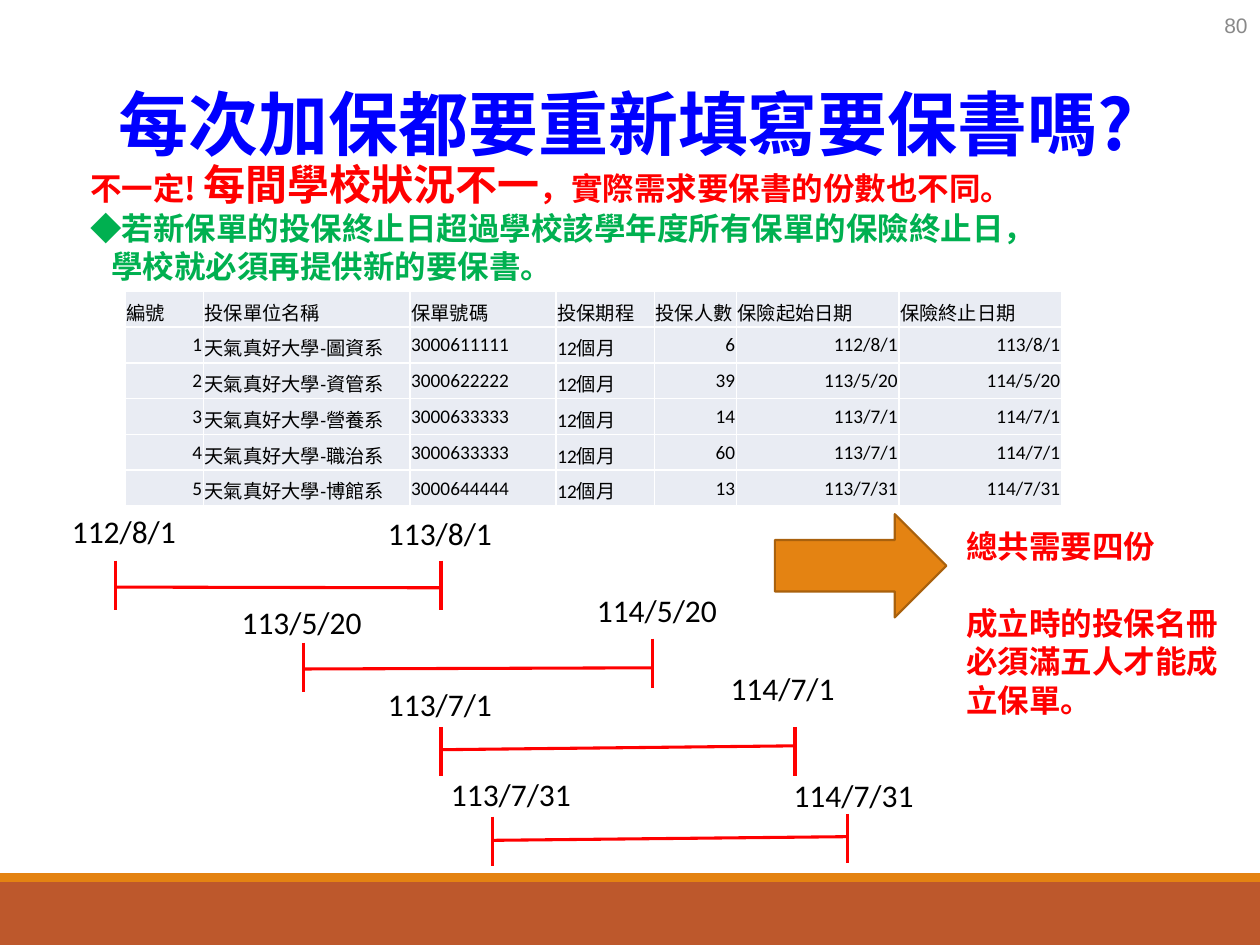
from lxml import etree
from pptx import Presentation
from pptx import util as u
from pptx.dml import color
from pptx.enum import shapes, text
from pptx.oxml import ns

Pt = u.Pt
CJK = "Noto Sans CJK SC"
RED, GREEN, ORANGE = "FF0000", "00B050", "E48312"
LEFT, CENTER, RIGHT = text.PP_ALIGN.LEFT, text.PP_ALIGN.CENTER, text.PP_ALIGN.RIGHT
TICK = 28.3

HEADINGS = ["編號", "投保單位名稱", "保單號碼", "投保期程", "投保人數", "保險起始日期", "保險終止日期"]
POLICIES = [
    ("圖資系", "3000611111", "6", "112/8/1", "113/8/1"),
    ("資管系", "3000622222", "39", "113/5/20", "114/5/20"),
    ("營養系", "3000633333", "14", "113/7/1", "114/7/1"),
    ("職治系", "3000633333", "60", "113/7/1", "114/7/1"),
    ("博館系", "3000644444", "13", "113/7/31", "114/7/31"),
]
COLUMNS = [44.6, 118.1, 83.5, 56.2, 46.8, 92.9, 92.9]
ALIGNS = [RIGHT, LEFT, LEFT, LEFT, RIGHT, RIGHT, RIGHT]

# date, tick x, tick top, bar y, label x, label y
PERIODS = [
    (("112/8/1", 36, 32.4, 47.5, 4, 1), ("113/8/1", 222, 32.4, 47.9, 184.6, 2)),
    (("113/5/20", 143.5, 79.2, 94.3, 101, 53.3), ("114/5/20", 343, 77, 93.6, 304, 46)),
    (("113/7/1", 222, 127.4, 140.4, 184.6, 100), ("114/7/1", 424.3, 127.4, 138.2, 380.4, 90.7)),
    (("113/7/31", 251.5, 178.6, 192.2, 220.6, 151.2), ("114/7/31", 454.5, 177.1, 190.1, 416.4, 152)),
]


def rgb(value):
    return color.RGBColor.from_string(value)


def write(paragraph, words, size=18, font=CJK, ink="000000", bold=False, align=LEFT, leading=None):
    paragraph.alignment = align
    if leading:
        paragraph.line_spacing = Pt(leading)
    run = paragraph.add_run()
    run.text = words
    run.font.size = Pt(size)
    run.font.name = font
    run.font.bold = bold
    run.font.color.rgb = rgb(ink)
    if font == CJK:
        east = etree.SubElement(run._r.get_or_add_rPr(), ns.qn("a:ea"))
        east.set("typeface", font)


def text_frame(slide, box, wrap=True, anchor=text.MSO_ANCHOR.TOP):
    frame = slide.shapes.add_textbox(*map(Pt, box)).text_frame
    frame.word_wrap = wrap
    frame.vertical_anchor = anchor
    return frame


def add_block(slide, kind, box, fill, line=None):
    block = slide.shapes.add_shape(kind, *map(Pt, box))
    block.shadow.inherit = False
    block.fill.solid()
    block.fill.fore_color.rgb = rgb(fill)
    if line:
        block.line.color.rgb = rgb(line)
        block.line.width = Pt(1.25)
    else:
        block.line.fill.background()


def add_line(slide, *ends):
    line = slide.shapes.add_connector(shapes.MSO_CONNECTOR.STRAIGHT, *map(Pt, ends))
    line.line.color.rgb = rgb(RED)
    line.line.width = Pt(1.75)
    etree.SubElement(line._element.spPr, ns.qn("a:effectLst"))


def add_footer(slide, box):
    left, top, width, height = box
    stripe = 5
    add_block(slide, shapes.MSO_SHAPE.RECTANGLE, (left, top + stripe, width, height - stripe), "BD582C")
    add_block(slide, shapes.MSO_SHAPE.RECTANGLE, (left, top, width, stripe), ORANGE)


def add_title(slide, box):
    write(text_frame(slide, box).paragraphs[0], "每次加保都要重新填寫要保書嗎?",
          size=40, ink="0000FF", bold=True, align=CENTER, leading=48.7)


def add_answer(slide, box):
    frame = text_frame(slide, box)
    answer = frame.paragraphs[0]
    for words, size in (("不一定! ", 18), ("每間學校狀況不一", 24), ("，實際需求要保書的份數也不同。", 18)):
        write(answer, words, size=size, ink=RED, bold=True, leading=29.2)
    for words, indent in (("◆若新保單的投保終止日超過學校該學年度所有保單的保險終止日，", 0),
                          ("學校就必須再提供新的要保書。", 12)):
        rule = frame.add_paragraph()
        rule._p.get_or_add_pPr().set("marL", str(Pt(indent)))
        write(rule, words, font="Arial", ink=GREEN, bold=True, leading=21.9)


def add_borders(cell):
    properties = cell._tc.get_or_add_tcPr()
    for index, side in enumerate(("lnL", "lnR", "lnT", "lnB")):
        border = etree.Element(ns.qn("a:" + side), w=str(Pt(0.96)))
        fill = etree.SubElement(border, ns.qn("a:solidFill"))
        etree.SubElement(fill, ns.qn("a:srgbClr"), val="FFFFFF")
        properties.insert(index, border)


def add_policies(slide, box):
    rows = [HEADINGS] + [
        [str(number), "天氣真好大學-" + unit, policy, "12個月", people, start, end]
        for number, (unit, policy, people, start, end) in enumerate(POLICIES, 1)]
    table = slide.shapes.add_table(len(rows), len(COLUMNS), *map(Pt, box)).table
    for column, width in zip(table.columns, COLUMNS):
        column.width = Pt(width)
    for r, row in enumerate(rows):
        table.rows[r].height = Pt(box[3] / len(rows))
        for c, words in enumerate(row):
            cell = table.cell(r, c)
            cell.margin_left = cell.margin_right = Pt(0.7)
            cell.fill.solid()
            cell.fill.fore_color.rgb = rgb("E9ECF3")
            add_borders(cell)
            write(cell.text_frame.paragraphs[0], words, size=11, font="Calibri",
                  align=ALIGNS[c] if r else LEFT)


def add_timeline(slide, left, top):
    for period in PERIODS:
        for date, x, tick_top, _, label_x, label_y in period:
            add_line(slide, left + x, top + tick_top, left + x, top + tick_top + TICK)
            width = 75 if len(date) == 7 else 84.2
            label = text_frame(slide, (left + label_x, top + label_y, width, 29), wrap=False)
            write(label.paragraphs[0], date, font="Calibri")
        start, end = period
        add_line(slide, left + end[1], top + end[3], left + start[1], top + start[3])


def add_conclusion(slide, box):
    left, top, width, height = box
    add_block(slide, shapes.MSO_SHAPE.RIGHT_ARROW, (left, top, 98, 59), ORANGE, line="A9610D")
    frame = text_frame(slide, (left + 102.2, top + 3.6, width - 102.2, height - 3.6))
    write(frame.paragraphs[0], "總共需要四份", ink=RED, bold=True, leading=21.9)
    condition = frame.add_paragraph()
    condition.space_before = Pt(21.9)
    write(condition, "成立時的投保名冊必須滿五人才能成立保單。", ink=RED, bold=True, leading=21.9)


def add_page_number(slide, box):
    frame = text_frame(slide, box, anchor=text.MSO_ANCHOR.MIDDLE)
    write(frame.paragraphs[0], "80", size=12, font="Arial", ink="898989", align=RIGHT)


def main():
    deck = Presentation()
    deck.slide_width, deck.slide_height = Pt(720), Pt(540)
    slide = deck.slides.add_slide(deck.slide_layouts[6])
    add_footer(slide, (0, 499, 720, 41))
    add_title(slide, (-6.5, 41.8, 728.6, 90))
    add_answer(slide, (44.6, 86.4, 657.4, 80))
    add_policies(slide, (71.6, 166.5, 535, 122.4))
    add_timeline(slide, 30, 288)
    add_conclusion(slide, (442.8, 293.8, 267.1, 120.2))
    add_page_number(slide, (642.2, 0, 77.8, 29))
    deck.save("out.pptx")


if __name__ == "__main__":
    main()
